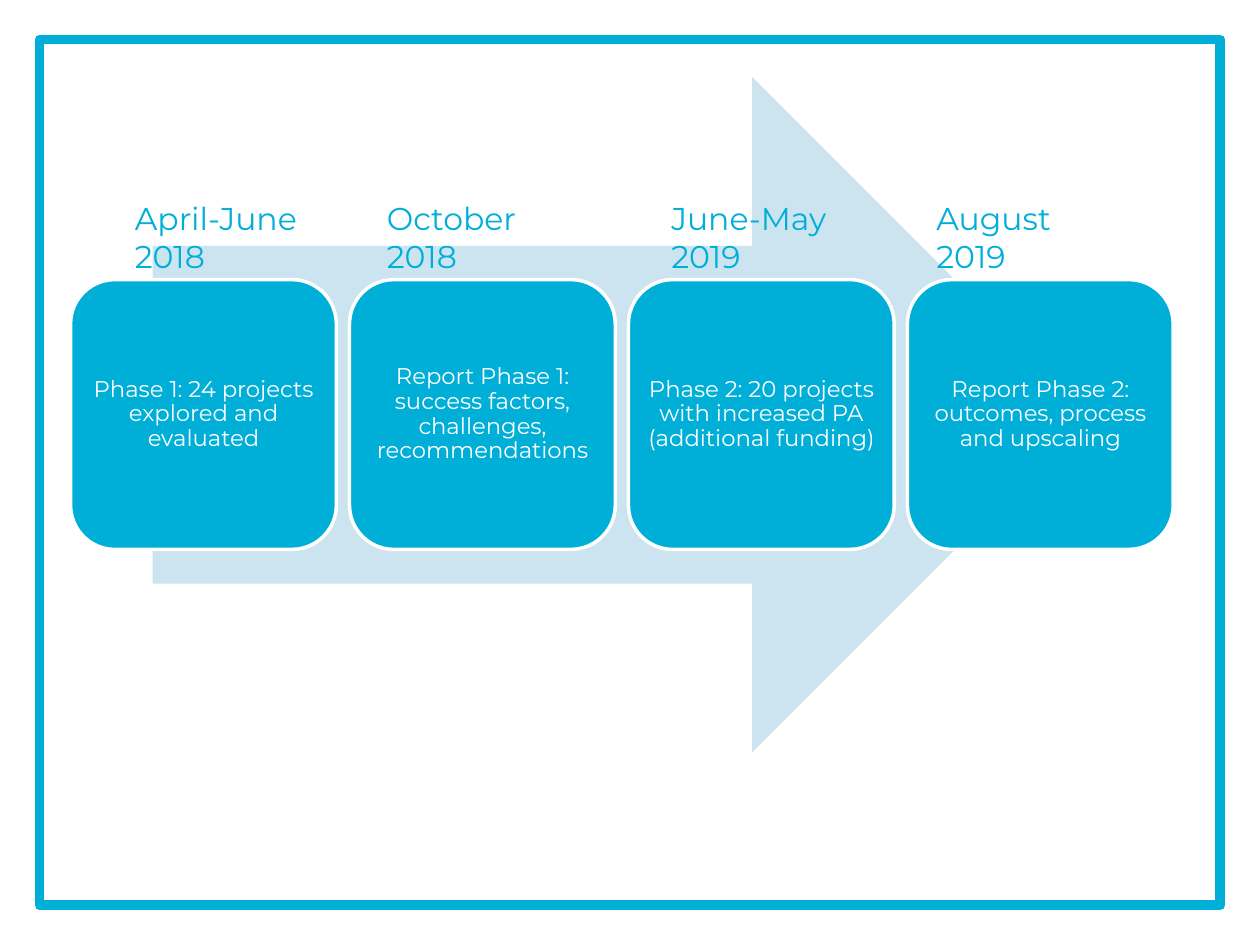
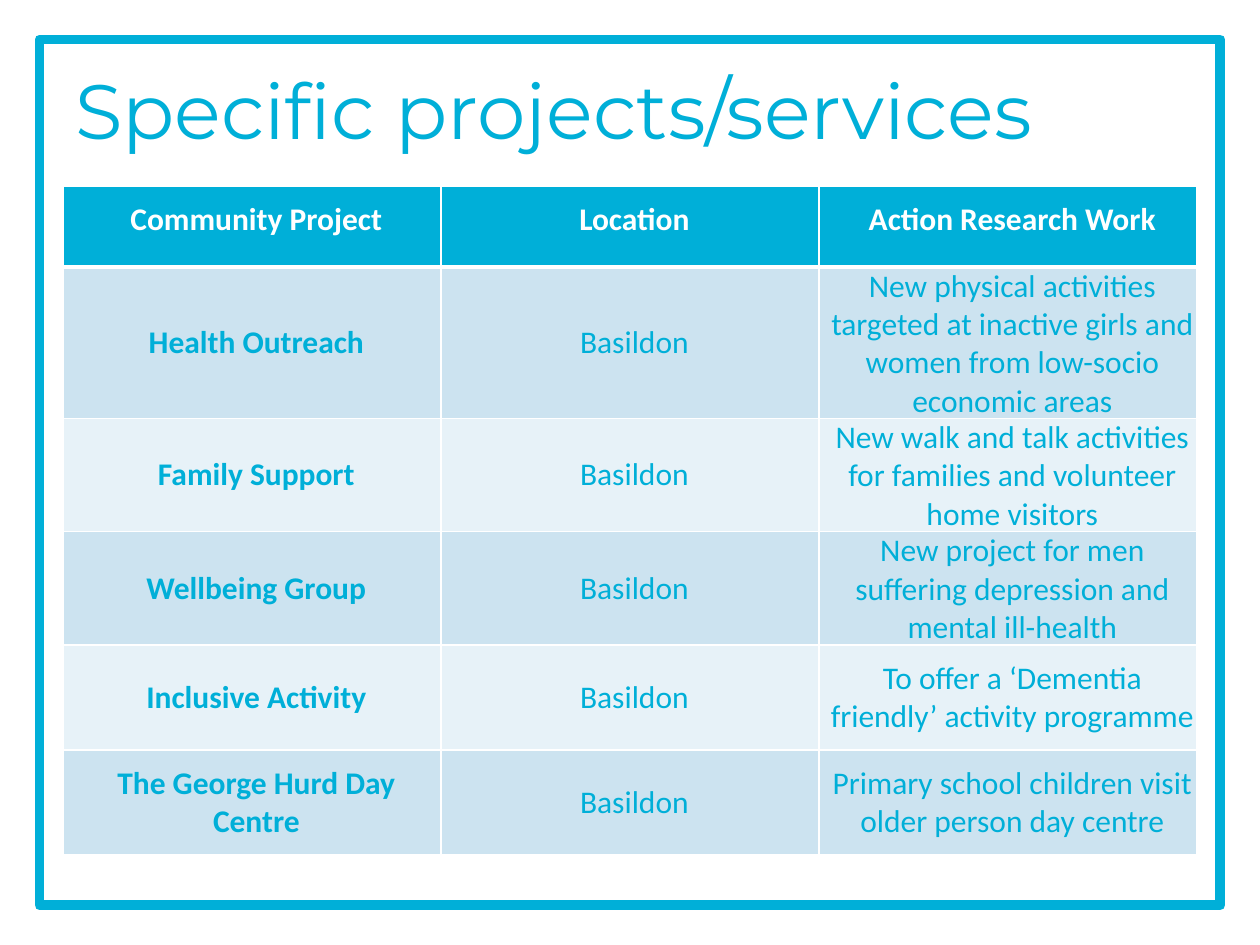
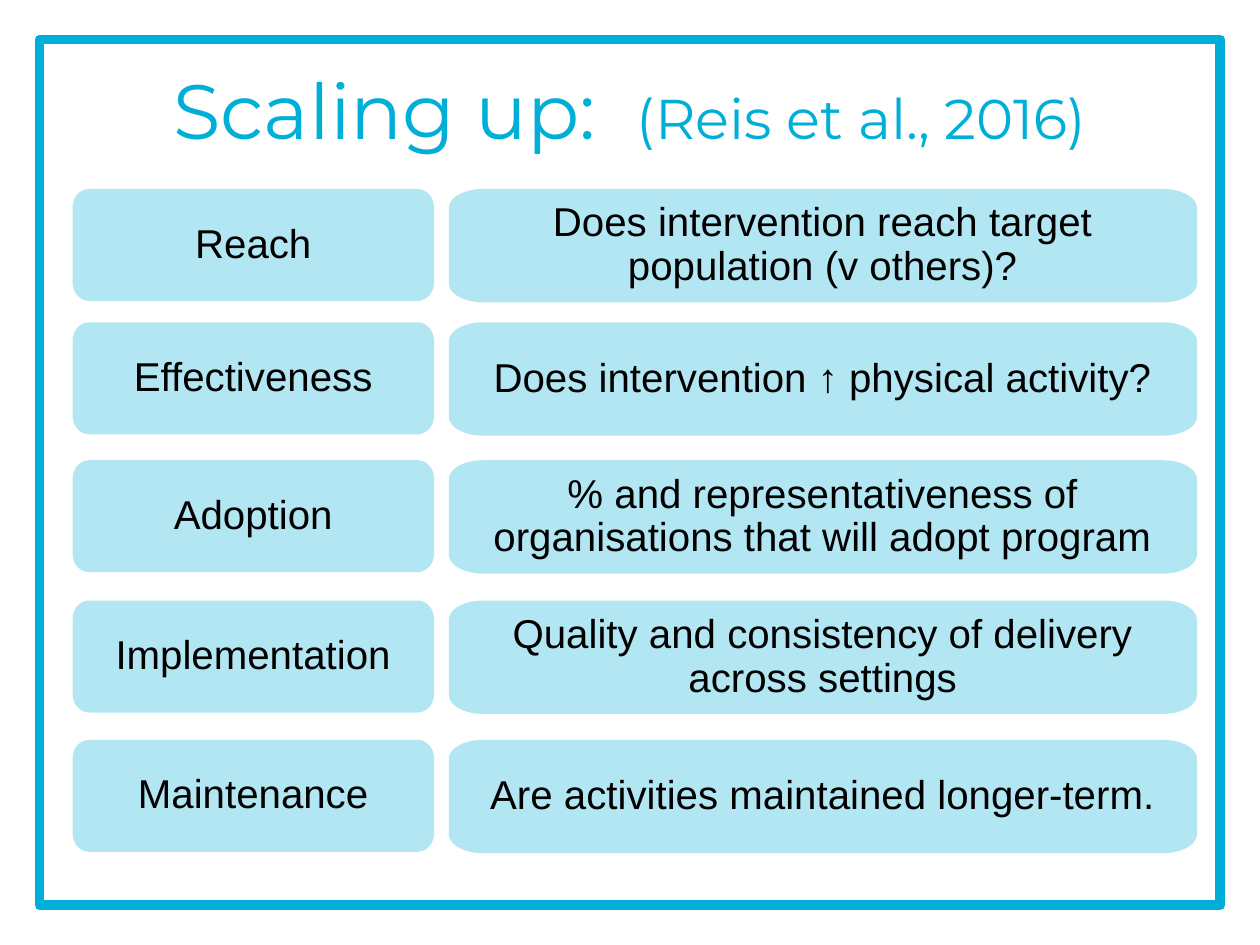
import math
from dataclasses import dataclass

import pptx
import pptx.dml.color
import pptx.enum.shapes
import pptx.enum.text
import pptx.oxml
import pptx.oxml.ns
import pptx.util

Pt = pptx.util.Pt
RGB = pptx.dml.color.RGBColor.from_string
SHAPE = pptx.enum.shapes.MSO_SHAPE
ALIGN = pptx.enum.text.PP_ALIGN
ANCHOR = pptx.enum.text.MSO_ANCHOR
qn = pptx.oxml.ns.qn


@dataclass(frozen=True)
class Theme:
    """Colours, fonts and type sizes shared by the slides."""
    accent: str = "00AFD8"
    pale: str = "CCE3F0"
    paler: str = "E7F2F8"
    white: str = "FFFFFF"
    black: str = "000000"
    display: str = "Montserrat"
    table: str = "Calibri"
    body: str = "Arial"
    title: float = 44
    citation: float = 32
    criterion: float = 23
    label: float = 18
    step: float = 13


T = Theme()

STEPS = [
    (70, "April-June 2018", "Phase 1: 24 projects explored and evaluated"),
    (214, "October 2018", "Report Phase 1: success factors, challenges, recommendations"),
    (376.5, "June-May 2019", "Phase 2: 20 projects with increased PA (additional funding)"),
    (528, "August 2019", "Report Phase 2: outcomes, process and upscaling"),
]
PROJECTS = [
    ("Community Project", "Location", "Action Research Work"),
    ("Health Outreach", "Basildon",
     "New physical activities targeted at inactive girls and\nwomen from low-socio economic areas"),
    ("Family Support", "Basildon",
     "New walk and talk activities for families and volunteer\nhome visitors"),
    ("Wellbeing Group", "Basildon",
     "New project for men suffering depression and mental ill-health"),
    ("Inclusive Activity", "Basildon", "To offer a ‘Dementia friendly’ activity programme"),
    ("The George Hurd Day\nCentre", "Basildon",
     "Primary school children visit older person day centre"),
]
CRITERIA = [
    (108, "Reach", "Does intervention reach target population (v others)?"),
    (184.2, "Effectiveness", "Does intervention ↑ physical activity?"),
    (263, "Adoption", "% and representativeness of organisations that will adopt program"),
    (343.2, "Implementation", "Quality and consistency of delivery across settings"),
    (422.8, "Maintenance", "Are activities maintained longer-term."),
]


def write(tf, text, *, size, font=T.display, color=T.accent, bold=False, align=ALIGN.LEFT,
          line=None, anchor=ANCHOR.TOP, margins=(7.2, 3.6, 7.2, 3.6)):
    """Write lines of text into a text frame and return the last paragraph."""
    tf.word_wrap = True
    tf.vertical_anchor = anchor
    tf.margin_left, tf.margin_top, tf.margin_right, tf.margin_bottom = map(Pt, margins)
    for i, words in enumerate(text.split("\n")):
        p = tf.add_paragraph() if i else tf.paragraphs[0]
        p.alignment = align
        if line:
            p.line_spacing = line
        add_run(p, words, size=size, font=font, color=color, bold=bold)
    return p


def add_run(p, text, *, size, font=T.display, color=T.accent, bold=False, spacing=0):
    """Add one formatted run, with optional letter spacing in points."""
    r = p.add_run()
    r.text = text
    r.font.size, r.font.name, r.font.bold = Pt(size), font, bold
    r.font.color.rgb = RGB(color)
    if spacing:
        r._r.get_or_add_rPr().set("spc", str(round(spacing * 100)))


def paint(sp, fill=None, line=None, width=1):
    """Set fill and outline, and remove the shadow."""
    sp.shadow.inherit = False
    for part, color in ((sp.fill, fill), (sp.line.fill, line)):
        if color:
            part.solid()
            part.fore_color.rgb = RGB(color)
        else:
            part.background()
    if line:
        sp.line.width = Pt(width)
    return sp


def add_shape(s, kind, x, y, w, h, **style):
    """Add a painted preset shape."""
    return paint(s.shapes.add_shape(kind, Pt(x), Pt(y), Pt(w), Pt(h)), **style)


def add_text(s, text, x, y, w, h, **style):
    """Add a text box and return its last paragraph."""
    return write(s.shapes.add_textbox(Pt(x), Pt(y), Pt(w), Pt(h)).text_frame, text, **style)


def add_title(s, text, align=ALIGN.LEFT):
    """Add the slide title."""
    return add_text(s, text, 36, 32.4, 648, 62.6, size=T.title, align=align)


def add_panel(s, text, x, y, w, h, rx, ry):
    """Add a translucent panel with elliptical corners."""
    points = []
    corners = ((x + w - rx, y + h - ry), (x + rx, y + h - ry),
               (x + rx, y + ry), (x + w - rx, y + ry))
    for i, (cx, cy) in enumerate(corners):
        for degrees in range(90 * i, 90 * i + 91, 10):
            a = math.radians(degrees)
            points.append((Pt(cx + rx * math.cos(a)), Pt(cy + ry * math.sin(a))))
    outline = s.shapes.build_freeform(*points[0])
    outline.add_line_segments(points[1:], close=True)
    sp = paint(outline.convert_to_shape(), fill=T.accent)
    color = sp._element.spPr.find(qn("a:solidFill")).find(qn("a:srgbClr"))
    color.append(color.makeelement(qn("a:alpha"), {"val": "30000"}))
    write(sp.text_frame, text, size=T.criterion, font=T.body, color=T.black, line=0.9,
          align=ALIGN.CENTER, anchor=ANCHOR.MIDDLE, margins=(8, 5.8, 8, 5.8))


def set_borders(cell, **widths):
    """Draw white cell borders of the given widths."""
    tc_pr = cell._tc.get_or_add_tcPr()
    for side in "LRTB":
        width = Pt(widths.get(side, 1))
        tc_pr.append(pptx.oxml.parse_xml(
            f'<a:ln{side} {pptx.oxml.ns.nsdecls("a")} w="{width}"><a:solidFill>'
            f'<a:srgbClr val="{T.white}"/></a:solidFill></a:ln{side}>'))


def add_table(s, rows, x, y, col_width, header_height, row_height):
    """Add a centred table with a header row and banded body rows."""
    n = len(rows[0])
    height = header_height + row_height * (len(rows) - 1)
    table = s.shapes.add_table(len(rows), n, Pt(x), Pt(y), Pt(col_width * n), Pt(height)).table
    for column in table.columns:
        column.width = Pt(col_width)
    for i, values in enumerate(rows):
        header = i == 0
        table.rows[i].height = Pt(header_height if header else row_height)
        for j, value in enumerate(values):
            cell = table.cell(i, j)
            set_borders(cell, **({"B": 3} if header else {"T": 3} if i == 1 else {}))
            cell.fill.solid()
            cell.fill.fore_color.rgb = RGB(T.accent if header else T.pale if i % 2 else T.paler)
            write(cell.text_frame, value, size=T.label, font=T.table, align=ALIGN.CENTER,
                  color=T.white if header else T.accent, bold=header or j == 0,
                  line=Pt(13.7) if header else None)
            cell.vertical_anchor = ANCHOR.MIDDLE
            cell.margin_left = Pt(5)
            cell.margin_top = cell.margin_right = cell.margin_bottom = 0


def new_slide(prs):
    """Add a blank slide with the shared frame."""
    s = prs.slides.add_slide(prs.slide_layouts[6])
    add_shape(s, SHAPE.RECTANGLE, 22.6, 22.6, 674.8, 494.8, line=T.accent, width=5.67)
    return s


def build_timeline(prs):
    """Build the project timeline."""
    s = new_slide(prs)
    add_shape(s, SHAPE.RIGHT_ARROW, 87.2, 44, 535.6, 386, fill=T.pale)
    for i, (_, _, text) in enumerate(STEPS):
        sp = add_shape(s, SHAPE.ROUNDED_RECTANGLE, 40.3 + 159.4 * i, 159.8, 151.9, 154.2,
                       fill=T.accent, line=T.white, width=2)
        write(sp.text_frame, text, size=T.step, color=T.white, line=0.9, align=ALIGN.CENTER,
              anchor=ANCHOR.MIDDLE, margins=(3.6,) * 4)
    for x, date, _ in STEPS:
        add_text(s, date, x, 110.2, 118, 51, size=T.label)


def build_projects(prs):
    """Build the table of projects."""
    s = new_slide(prs)
    add_title(s, "Specific projects/services")
    add_table(s, PROJECTS, 36, 106.6, 216, 46, 60)


def build_scaling(prs):
    """Build the criteria for scaling up."""
    s = new_slide(prs)
    p = add_title(s, "Scaling up:", ALIGN.CENTER)
    add_run(p, " ", size=T.title, spacing=11.5)
    add_run(p, "(Reis et al., 2016)", size=T.citation)
    for y, name, question in CRITERIA:
        add_panel(s, name, 41.5, y, 206.6, 64, 9.5, 10.6)
        add_panel(s, question, 256.5, y, 427.5, 64.8, 19.5, 10.8)


def main():
    """Build and save the presentation."""
    prs = pptx.Presentation()
    prs.slide_width, prs.slide_height = Pt(720), Pt(540)
    build_timeline(prs)
    build_projects(prs)
    build_scaling(prs)
    prs.save("out.pptx")


if __name__ == "__main__":
    main()
